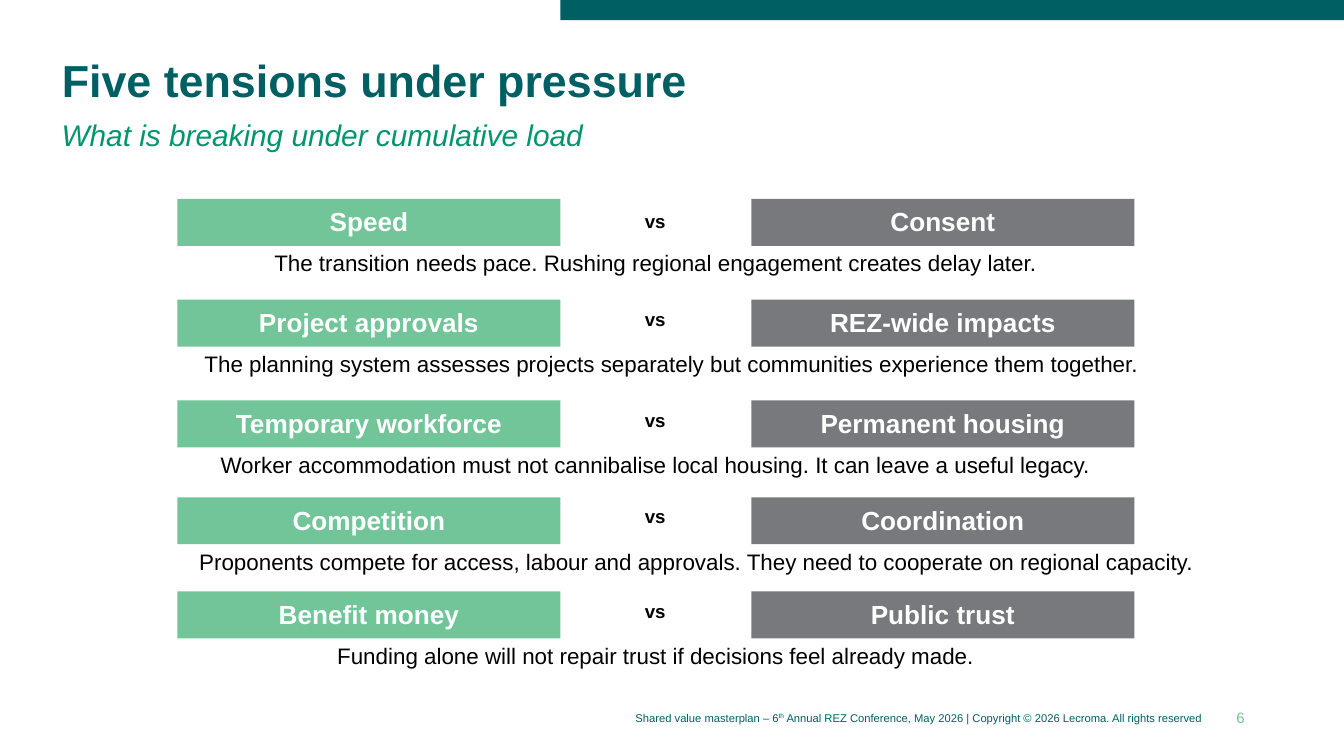
from dataclasses import dataclass

import pptx
import pptx.dml.color
import pptx.enum.shapes
import pptx.enum.text
import pptx.util

Inches = pptx.util.Inches
Align = pptx.enum.text.PP_ALIGN
Anchor = pptx.enum.text.MSO_ANCHOR

COLORS = {
    "teal": "005F63",
    "green": "00956E",
    "mint": "71C598",
    "grey": "77797C",
    "black": "000000",
    "white": "FFFFFF",
}
FONT = "Arial"
LEFT_BAR, RIGHT_BAR = 1.32, 5.59
BAR_WIDTH, BAR_HEIGHT = 2.85, 0.35
LABEL_DROP = 0.05


@dataclass
class Style:
    size: float
    color: str
    bold: bool = False
    italic: bool = False
    align: Align = Align.CENTER
    line_spacing: float = 0.9


@dataclass
class Tension:
    top: float
    left_label: str
    right_label: str
    caption: str
    versus_top: float
    caption_left: float = LEFT_BAR
    caption_width: float = RIGHT_BAR + BAR_WIDTH - LEFT_BAR


TITLE = Style(24, "teal", bold=True, align=Align.LEFT)
SUBTITLE = Style(16, "green", italic=True, align=Align.LEFT)
BAR_LABEL = Style(14, "white", bold=True, line_spacing=1.0)
VERSUS = Style(10, "black", bold=True)
CAPTION = Style(12, "black")
FOOTER = Style(6, "teal", align=Align.RIGHT, line_spacing=1.0)
PAGE_NUMBER = Style(8, "mint", line_spacing=1.0)

TENSIONS = [
    Tension(1.48, "Speed", "Consent",
            "The transition needs pace. Rushing regional engagement creates delay later.",
            1.53),
    Tension(2.23, "Project approvals", "REZ-wide impacts",
            "The planning system assesses projects separately but communities "
            "experience them together.",
            2.26, 0, 10),
    Tension(2.98, "Temporary workforce", "Permanent housing",
            "Worker accommodation must not cannibalise local housing. "
            "It can leave a useful legacy.",
            3.01),
    Tension(3.7, "Competition", "Coordination",
            "Proponents compete for access, labour and approvals. "
            "They need to cooperate on regional capacity.",
            3.73, 1.22, 7.93),
    Tension(4.4, "Benefit money", "Public trust",
            "Funding alone will not repair trust if decisions feel already made.",
            4.43),
]


def rgb(name: str) -> pptx.dml.color.RGBColor:
    return pptx.dml.color.RGBColor.from_string(COLORS[name])


def write(shape, parts: list[str], style: Style, anchor: Anchor = Anchor.TOP) -> None:
    """Fill a shape with one paragraph, one run per part."""
    frame = shape.text_frame
    frame.word_wrap = True
    frame.auto_size = pptx.enum.text.MSO_AUTO_SIZE.NONE
    frame.vertical_anchor = anchor
    para = frame.paragraphs[0]
    para.alignment = style.align
    para.line_spacing = style.line_spacing
    for part in parts:
        span = para.add_run()
        span.text = part
        span.font.name = FONT
        span.font.size = pptx.util.Pt(style.size)
        span.font.bold = style.bold
        span.font.italic = style.italic
        span.font.color.rgb = rgb(style.color)


def add_text(page, left: float, top: float, width: float, height: float,
             parts: list[str], style: Style, anchor: Anchor = Anchor.TOP):
    box = page.shapes.add_textbox(Inches(left), Inches(top), Inches(width), Inches(height))
    write(box, parts, style, anchor)
    return box


def add_bar(page, left: float, top: float, width: float, height: float, color: str) -> None:
    bar = page.shapes.add_shape(pptx.enum.shapes.MSO_SHAPE.RECTANGLE, Inches(left),
                                Inches(top), Inches(width), Inches(height))
    bar.shadow.inherit = False
    bar.fill.solid()
    bar.fill.fore_color.rgb = rgb(color)
    bar.line.fill.background()


def add_title(page, text: str) -> None:
    title = page.shapes.title
    title.left, title.top = Inches(0.36), Inches(0.39)
    title.width, title.height = Inches(8.08), Inches(0.52)
    write(title, [text], TITLE)


def add_tension(page, tension: Tension) -> None:
    add_text(page, tension.caption_left, tension.top + BAR_HEIGHT,
             tension.caption_width, 0.3, [tension.caption], CAPTION)
    for left, label, color in ((LEFT_BAR, tension.left_label, "mint"),
                               (RIGHT_BAR, tension.right_label, "grey")):
        add_bar(page, left, tension.top, BAR_WIDTH, BAR_HEIGHT, color)
        box = add_text(page, left, tension.top + LABEL_DROP, BAR_WIDTH, BAR_HEIGHT,
                       [label], BAR_LABEL)
        frame = box.text_frame
        frame.margin_left = frame.margin_right = 0
        frame.margin_top = frame.margin_bottom = 0
    add_text(page, 4.6, tension.versus_top, 0.55, 0.3, ["vs"], VERSUS)


def add_footer(page) -> None:
    footer = add_text(
        page, 4.33, 5.19, 4.71, 0.3,
        ["Shared value masterplan – 6", "th",
         " Annual REZ Conference, May 2026 | Copyright © 2026 Lecroma. All rights reserved"],
        FOOTER, Anchor.MIDDLE)
    ordinal = footer.text_frame.paragraphs[0].runs[1]
    ordinal._r.get_or_add_rPr().set("baseline", "30000")
    add_text(page, 9.03, 5.19, 0.4, 0.3, ["6"], PAGE_NUMBER, Anchor.MIDDLE)


def main() -> None:
    deck = pptx.Presentation()
    deck.slide_width = Inches(10)
    deck.slide_height = Inches(10 * 9 / 16)
    page = deck.slides.add_slide(deck.slide_layouts.get_by_name("Title Only"))
    add_bar(page, 4.17, 0, 5.83, 0.15, "teal")
    add_footer(page)
    add_title(page, "Five tensions under pressure")
    add_text(page, 0.36, 0.85, 9.28, 0.52,
             ["What is breaking under cumulative load"], SUBTITLE)
    for tension in TENSIONS:
        add_tension(page, tension)
    deck.save("out.pptx")


if __name__ == "__main__":
    main()
